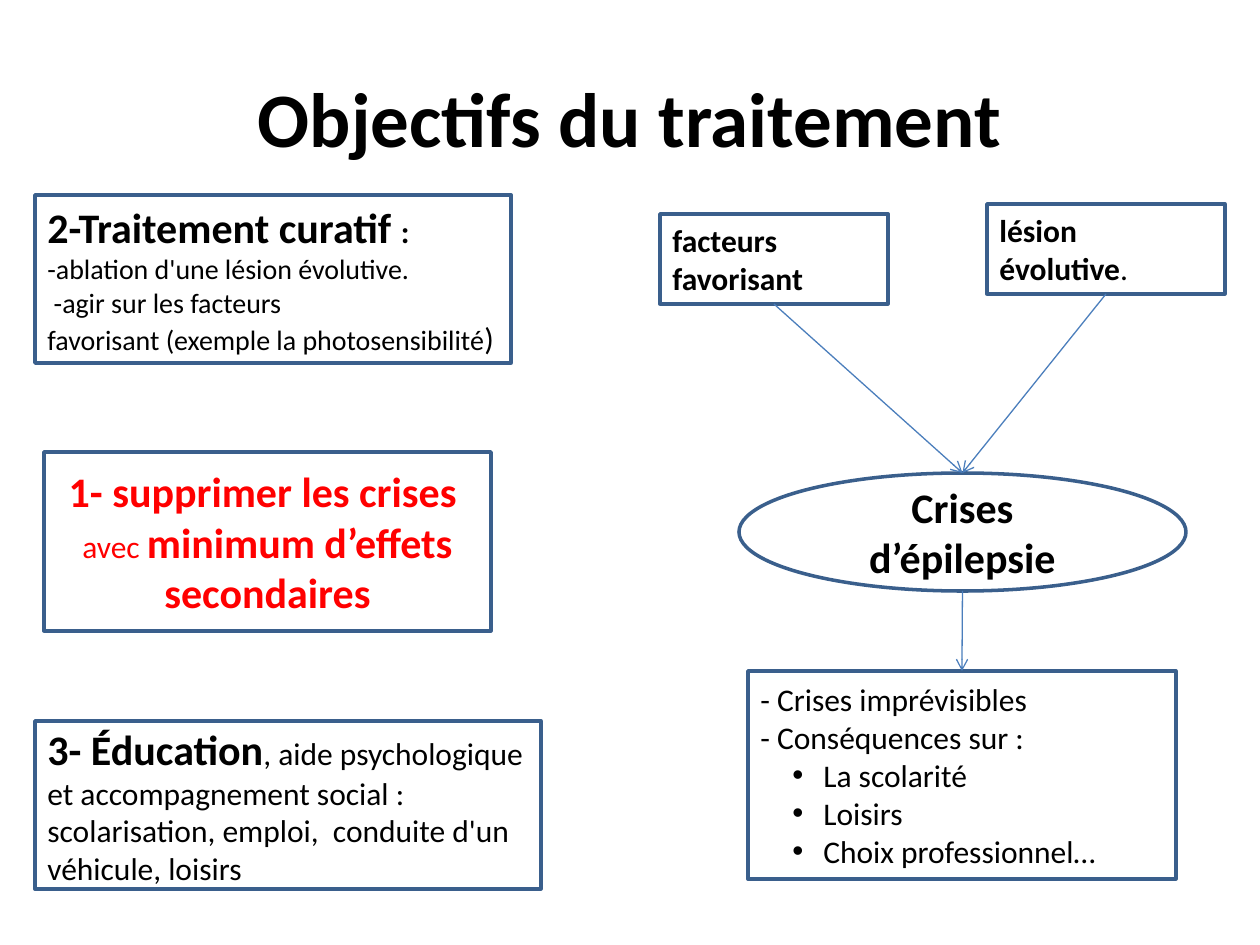
from lxml import etree
from pptx import Presentation, util as u
from pptx.dml.color import RGBColor
from pptx.enum import shapes as s, text as t
from pptx.oxml.ns import qn

PX = 914400 // 126
BLACK = RGBColor(0, 0, 0)
WHITE = RGBColor(255, 255, 255)
RED = RGBColor(255, 0, 0)
BORDER = RGBColor(0x3A, 0x5F, 0x8C)
ARROW = RGBColor(0x4B, 0x7E, 0xBC)
HANGING = (70, -70)
BULLET = (63, -31)


def write(frame, paragraphs, color=BLACK, align=t.PP_ALIGN.LEFT, indent=None, bullets=()):
    """Each paragraph is a list of (text, size, bold) runs; indent skips 24 pt headings."""
    frame.word_wrap = True
    frame.vertical_anchor = t.MSO_ANCHOR.MIDDLE
    for index, runs in enumerate(paragraphs):
        paragraph = frame.paragraphs[0] if index == 0 else frame.add_paragraph()
        paragraph.alignment = align
        properties = paragraph._p.get_or_add_pPr()
        margins = BULLET if index in bullets else indent
        if margins and runs[0][1] < 24:
            properties.set("marL", str(margins[0] * PX))
            properties.set("indent", str(margins[1] * PX))
        if index in bullets:
            etree.SubElement(properties, qn("a:buFont"), typeface="Arial")
            etree.SubElement(properties, qn("a:buChar"), char="•")
        for words, size, bold in runs:
            run = paragraph.add_run()
            run.text = words
            run.font.name = "Calibri"
            run.font.size = u.Pt(size)
            run.font.bold = bold
            run.font.color.rgb = color


presentation = Presentation()
presentation.slide_width = u.Inches(10)
presentation.slide_height = u.Inches(7.5)
slide = presentation.slides.add_slide(presentation.slide_layouts[5])

# Title
title = slide.shapes.title
title.left, title.top, title.width, title.height = [v * PX for v in (63, 38, 1134, 157)]
write(title.text_frame, [[("Objectifs du traitement", 44, True)]], align=t.PP_ALIGN.CENTER)

# Boxes: treatment goals on the left, causes and consequences on the right
RECT, OVAL = s.MSO_SHAPE.RECTANGLE, s.MSO_SHAPE.OVAL
CENTER = t.PP_ALIGN.CENTER
boxes = [
    ("suppression", RECT, (44, 452, 447, 179),
     [[("1- supprimer les crises  ", 24, True), ("avec ", 18, False),
       ("minimum d’effets secondaires", 24, True)]],
     dict(color=RED, align=CENTER)),
    ("curatif", RECT, (35, 195, 476, 168),
     [[("2-Traitement curatif ", 24, True), (":", 18, True)],
      [("-ablation d'une lésion évolutive.", 16, False)],
      [(" -agir sur les facteurs", 16, False)],
      [("favorisant (exemple la photosensibilité", 16, False), (")", 18, False)]],
     dict(indent=HANGING)),
    ("éducation", RECT, (35, 721, 506, 168),
     [[("3- Éducation", 24, True),
       (", aide psychologique et accompagnement social : "
        "scolarisation, emploi,  conduite d'un véhicule, loisirs", 18, False)]], {}),
    ("crises", OVAL, (739, 473, 447, 118),
     [[("Crises d’épilepsie", 24, True)]], dict(align=CENTER)),
    ("lésion", RECT, (987, 204, 238, 90),
     [[("lésion", 18, True)], [("évolutive", 18, True), (".", 18, False)]],
     dict(indent=HANGING)),
    ("facteurs", RECT, (660, 214, 228, 90),
     [[("facteurs", 18, True)], [("favorisant", 18, True)]], dict(indent=HANGING)),
    ("conséquences", RECT, (748, 671, 428, 208),
     [[(line, 18, False)] for line in (
         "- Crises imprévisibles", "- Conséquences sur :",
         "La scolarité", "Loisirs", "Choix professionnel…")],
     dict(bullets=(2, 3, 4))),
]
placed = {}
for name, kind, bounds, paragraphs, style in boxes:
    shape = slide.shapes.add_shape(kind, *[v * PX for v in bounds])
    shape.shadow.inherit = False
    shape.fill.solid()
    shape.fill.fore_color.rgb = WHITE
    shape.line.color.rgb = BORDER
    shape.line.width = u.Pt(2)
    write(shape.text_frame, paragraphs, **style)
    placed[name] = shape

# Arrows from bottom centre to top centre
for start, end in (("facteurs", "crises"), ("lésion", "crises"), ("crises", "conséquences")):
    first, last = placed[start], placed[end]
    arrow = slide.shapes.add_connector(
        s.MSO_CONNECTOR.STRAIGHT,
        first.left + first.width // 2, first.top + first.height,
        last.left + last.width // 2, last.top)
    arrow.line.color.rgb = ARROW
    arrow.line.width = u.Pt(0.75)
    etree.SubElement(arrow.line._get_or_add_ln(), qn("a:tailEnd"), type="arrow")
    etree.SubElement(arrow._element.spPr, qn("a:effectLst"))

presentation.save("out.pptx")
